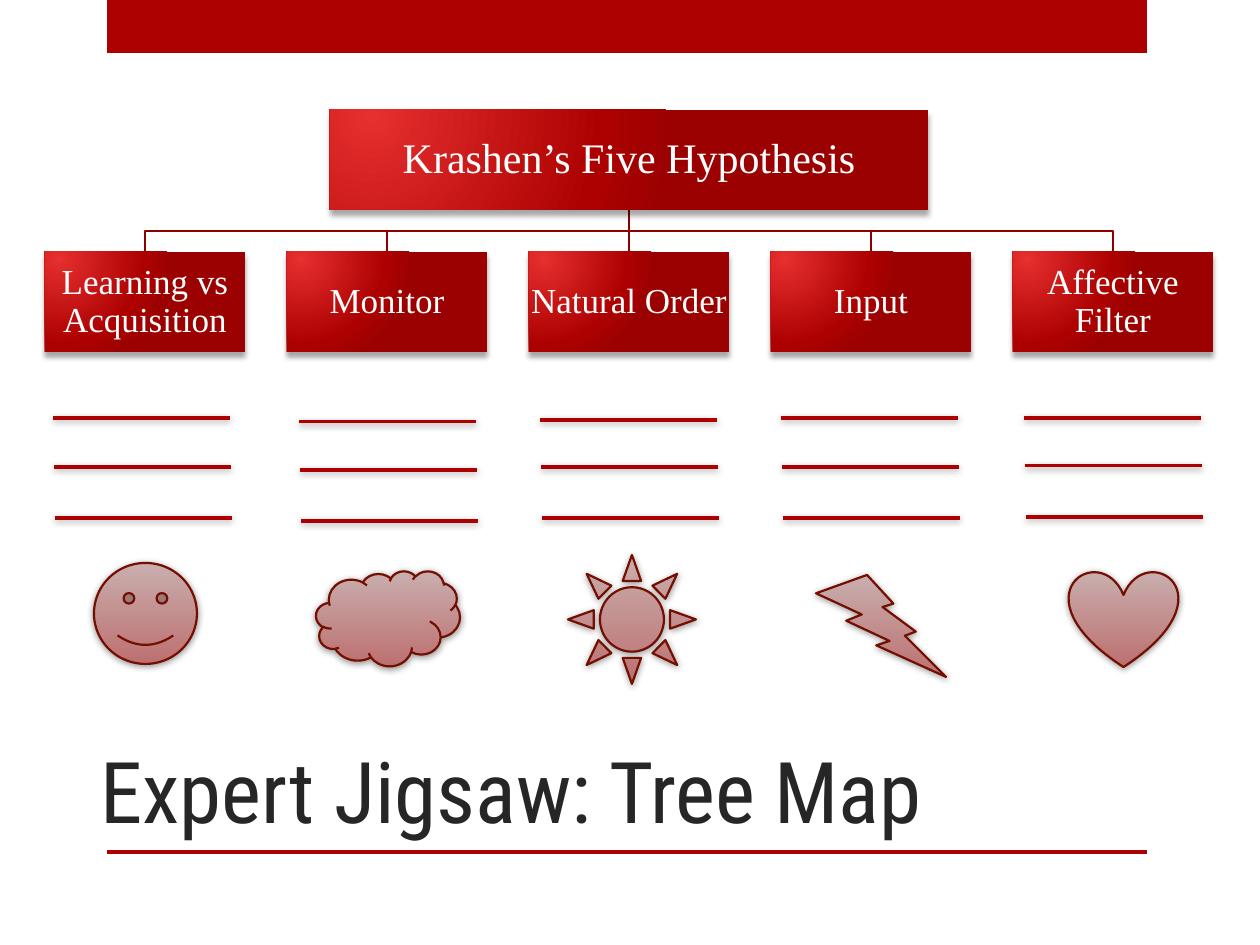
from lxml import etree
from pptx import Presentation
from pptx.dml.color import RGBColor
from pptx.enum.shapes import MSO_CONNECTOR, MSO_SHAPE
from pptx.enum.text import MSO_ANCHOR, PP_ALIGN
from pptx.oxml import parse_xml
from pptx.oxml.ns import nsdecls, qn
from pptx.util import Pt

SCALE = 914400 / 126
RED = RGBColor(0xAD, 0x01, 0x01)
BRIGHT_RED = RGBColor(0xE6, 0x2F, 0x2F)
DEEP_RED = RGBColor(0x9C, 0x01, 0x01)
BRANCH_RED = RGBColor(0x8B, 0x01, 0x01)
OUTLINE_RED = RGBColor(0x73, 0x0E, 0x00)
PALE_PINK = RGBColor(0xC9, 0xAE, 0xAE)
DUSTY_PINK = RGBColor(0xBD, 0x70, 0x70)
WHITE = RGBColor(0xFF, 0xFF, 0xFF)
CHARCOAL = RGBColor(0x26, 0x26, 0x26)

RECTANGLE = MSO_SHAPE.RECTANGLE
STRAIGHT = MSO_CONNECTOR.STRAIGHT
MIDDLE, BOTTOM = MSO_ANCHOR.MIDDLE, MSO_ANCHOR.BOTTOM
CENTER, LEFT = PP_ALIGN.CENTER, PP_ALIGN.LEFT
SIDE_TOP, SIDE_BOTTOM = 0, 2

BOX_STOPS = [(0, BRIGHT_RED), (76, RED), (100, DEEP_RED)]
BOX_DIRECTION = (
    '<a:path path="circle"><a:fillToRect l="15000" t="15000" '
    'r="100000" b="100000"/></a:path>'
)
ICON_STOPS = [(0, PALE_PINK), (100, DUSTY_PINK)]
ICON_DIRECTION = '<a:lin ang="5400000" scaled="0"/>'
BOX_SHADOW = {"alpha": 35, "blur": 3, "distance": 3, "angle": 90}
SOFT_SHADOW = {"alpha": 40, "blur": 4, "distance": 1, "angle": 88}

ROOT_BOX = (330, 110, 598, 100)
BOX_LEFT, BOX_TOP, BOX_WIDTH, BOX_HEIGHT, BOX_STEP = 45, 252, 200, 100, 242
BRANCH_Y = 231
LINE_LENGTH = 177

HYPOTHESES = [
    ("Learning vs Acquisition", 53, (418, 467, 518)),
    ("Monitor", 299, (422, 470, 521)),
    ("Natural Order", 540, (420, 467, 518)),
    ("Input", 781, (418, 467, 518)),
    ("Affective Filter", 1024, (418, 466, 517)),
]
ICONS = [
    (MSO_SHAPE.SMILEY_FACE, (94, 563, 103, 101)),
    (MSO_SHAPE.CLOUD, (316, 571, 144, 95)),
    (MSO_SHAPE.SUN, (568, 555, 128, 129)),
    (MSO_SHAPE.LIGHTNING_BOLT, (816, 575, 130, 102)),
    (MSO_SHAPE.HEART, (1069, 571, 109, 96)),
]


def px(value):
    return round(value * SCALE)


def fill_gradient(shape, stops, direction):
    shape.fill.gradient()
    stop_xml = "".join(
        f'<a:gs pos="{position * 1000}"><a:srgbClr val="{color}"/></a:gs>'
        for position, color in stops
    )
    gradient = parse_xml(
        f'<a:gradFill {nsdecls("a")} rotWithShape="1">'
        f"<a:gsLst>{stop_xml}</a:gsLst>{direction}</a:gradFill>"
    )
    properties = shape._element.spPr
    properties.replace(properties.find(qn("a:gradFill")), gradient)


def set_effects(shape, shadow=None):
    effects = etree.SubElement(shape._element.spPr, qn("a:effectLst"))
    if shadow:
        effects.append(parse_xml(
            f'<a:outerShdw {nsdecls("a")} blurRad="{Pt(shadow["blur"])}" '
            f'dist="{Pt(shadow["distance"])}" dir="{shadow["angle"] * 60000}" '
            f'algn="ctr" rotWithShape="0"><a:srgbClr val="000000">'
            f'<a:alpha val="{shadow["alpha"] * 1000}"/></a:srgbClr></a:outerShdw>'
        ))


def set_line(shape, color, width):
    shape.line.color.rgb = color
    shape.line.width = Pt(width)


def write_text(shape, text, frame_format, paragraph_format, font_format, color):
    frame = shape.text_frame
    paragraph = frame.paragraphs[0]
    run = paragraph.add_run()
    run.text = text
    for target, values in (
        (frame, frame_format),
        (paragraph, paragraph_format),
        (run.font, font_format),
    ):
        for name, value in values.items():
            setattr(target, name, value)
    run.font.color.rgb = color


def add_bar(slide, box):
    shape = slide.shapes.add_shape(RECTANGLE, *map(px, box))
    shape.fill.solid()
    shape.fill.fore_color.rgb = RED
    shape.line.fill.background()
    set_effects(shape)


def add_title(slide, text):
    shape = slide.shapes.add_textbox(px(88), px(626), px(935), px(221))
    write_text(
        shape, text,
        {"word_wrap": True, "vertical_anchor": BOTTOM},
        {"alignment": LEFT},
        {"name": "Roboto Condensed", "size": Pt(48.6)},
        CHARCOAL,
    )


def add_box(slide, box, text, size, inset):
    shape = slide.shapes.add_shape(RECTANGLE, *map(px, box))
    fill_gradient(shape, BOX_STOPS, BOX_DIRECTION)
    shape.line.fill.background()
    set_effects(shape, BOX_SHADOW)
    sides = ("margin_left", "margin_top", "margin_right", "margin_bottom")
    write_text(
        shape, text,
        {"word_wrap": True, "vertical_anchor": MIDDLE,
         **dict.fromkeys(sides, px(inset))},
        {"alignment": CENTER, "line_spacing": 0.9},
        {"name": "Times New Roman", "size": Pt(size)},
        WHITE,
    )
    return shape


def add_branch(slide, start, end):
    (start_x, start_y), (end_x, end_y) = start, end
    builder = slide.shapes.build_freeform(start_x, start_y, scale=SCALE)
    builder.add_line_segments(
        [(start_x, BRANCH_Y), (end_x, BRANCH_Y), (end_x, end_y)], close=False
    )
    shape = builder.convert_to_shape()
    shape.fill.background()
    set_line(shape, BRANCH_RED, 1.25)
    set_effects(shape)


def add_straight(slide, start, end, color, width, shadow=None):
    connector = slide.shapes.add_connector(STRAIGHT, *map(px, start + end))
    set_line(connector, color, width)
    set_effects(connector, shadow)
    return connector


def add_tree(slide):
    root_left, root_top, root_width, root_height = ROOT_BOX
    start = (root_left + root_width // 2, root_top + root_height)
    lefts = [BOX_LEFT + BOX_STEP * column for column in range(len(HYPOTHESES))]
    trunk = None
    for left in reversed(lefts):
        end = (left + BOX_WIDTH // 2, BOX_TOP)
        if end[0] == start[0]:
            trunk = add_straight(slide, start, end, BRANCH_RED, 1.25)
        else:
            add_branch(slide, start, end)
    root = add_box(slide, ROOT_BOX, "Krashen’s Five Hypothesis", 24, 2)
    boxes = [
        add_box(slide, (left, BOX_TOP, BOX_WIDTH, BOX_HEIGHT), name, 20, 1)
        for left, (name, _, _) in zip(lefts, HYPOTHESES)
    ]
    trunk.begin_connect(root, SIDE_BOTTOM)
    trunk.end_connect(boxes[len(boxes) // 2], SIDE_TOP)


def add_note_lines(slide, left, heights):
    for row, y in enumerate(heights):
        x = left + row
        add_straight(slide, (x, y), (x + LINE_LENGTH, y), RED, 1.75, SOFT_SHADOW)


def add_icon(slide, kind, box):
    shape = slide.shapes.add_shape(kind, *map(px, box))
    fill_gradient(shape, ICON_STOPS, ICON_DIRECTION)
    set_line(shape, OUTLINE_RED, 1.25)
    set_effects(shape, SOFT_SHADOW)


def main():
    presentation = Presentation()
    presentation.slide_width, presentation.slide_height = px(1260), px(945)
    slide = presentation.slides.add_slide(presentation.slide_layouts[6])
    add_bar(slide, (107, 0, 1040, 53))
    add_bar(slide, (107, 850, 1040, 4))
    add_title(slide, "Expert Jigsaw: Tree Map")
    add_tree(slide)
    for _, left, heights in HYPOTHESES:
        add_note_lines(slide, left, heights)
    for kind, box in ICONS:
        add_icon(slide, kind, box)
    presentation.save("out.pptx")


if __name__ == "__main__":
    main()
